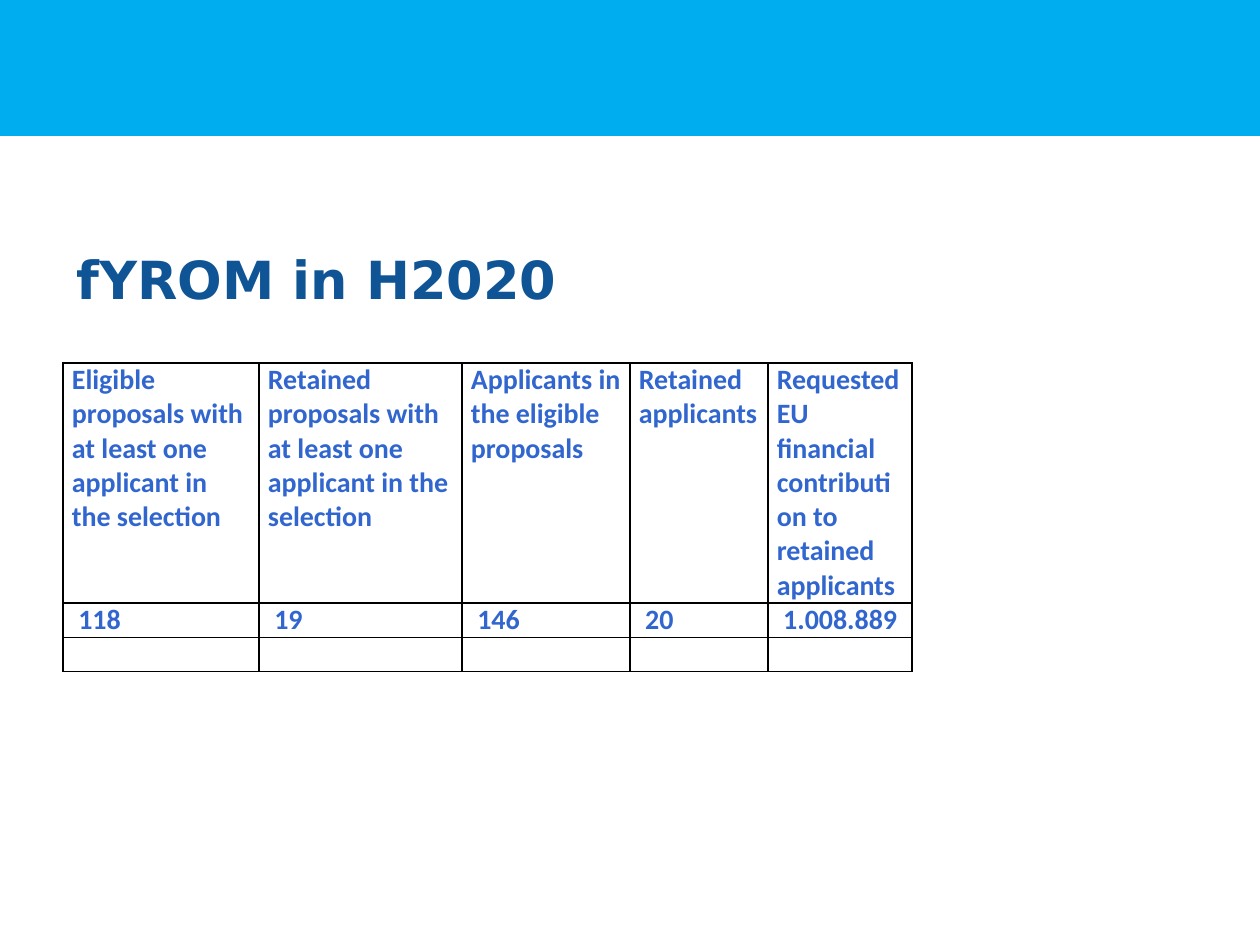
from lxml import etree
from pptx import Presentation
from pptx import util as u
from pptx.dml.color import RGBColor
from pptx.enum import shapes, text
from pptx.oxml.ns import qn

# Content
TITLE = "fYROM in H2020"
ROWS = [
    ["Eligible proposals with at least one applicant in the selection",
     "Retained proposals with at least one applicant in the selection",
     "Applicants in the eligible proposals",
     "Retained applicants",
     "Requested EU financial contribution to retained applicants"],
    [" 118", " 19", " 146", " 20", " 1.008.889"],
    [""] * 5,
]
COLORS = {"band": "00AEF0", "title": "0F5494", "cell": "3166CF", "border": "000000"}

# Layout in px, 126 to the inch
SLIDE = (1260, 945)
BAND_HEIGHT = 136
TITLE_BOX = (64, 214, 1134, 129)
TITLE_INDENT = 49
TABLE_LEFT, TABLE_TOP = 63, 363
COLUMN_WIDTHS = [196, 203, 168, 138, 144]
ROW_HEIGHTS = [240, 34, 34]
CELL_MARGIN = 9


def px(length):
    return u.Emu(round(length * 914400 / 126))


def put_text(frame, words, *, font, size, color):
    paragraph = frame.paragraphs[0]
    paragraph.alignment = text.PP_ALIGN.LEFT
    if not words:
        # An empty line keeps the height of the text size
        etree.SubElement(paragraph._p, qn("a:endParaRPr"), sz=str(size * 100))
        return paragraph
    run = paragraph.add_run()
    run.text = words
    run.font.name, run.font.size, run.font.bold = font, u.Pt(size), True
    run.font.color.rgb = RGBColor.from_string(COLORS[color])
    return paragraph


def add_borders(cell):
    properties = cell._tc.get_or_add_tcPr()
    for position, side in enumerate(("a:lnL", "a:lnR", "a:lnT", "a:lnB")):
        line = etree.Element(qn(side), w=str(u.Pt(1)))
        fill = etree.SubElement(line, qn("a:solidFill"))
        etree.SubElement(fill, qn("a:srgbClr"), val=COLORS["border"])
        properties.insert(position, line)


prs = Presentation()
prs.slide_width, prs.slide_height = map(px, SLIDE)
slide = prs.slides.add_slide(prs.slide_layouts[5])

# Top band, behind the title
band = slide.shapes.add_shape(shapes.MSO_SHAPE.RECTANGLE, 0, 0, px(SLIDE[0]), px(BAND_HEIGHT))
band.shadow.inherit = False
band.fill.solid()
band.fill.fore_color.rgb = RGBColor.from_string(COLORS["band"])
band.line.fill.background()
slide.shapes._spTree.insert(2, band._element)

# Title
title = slide.shapes.title
title.left, title.top, title.width, title.height = map(px, TITLE_BOX)
title.text_frame.word_wrap = True
title.text_frame.vertical_anchor = text.MSO_ANCHOR.MIDDLE
heading = put_text(title.text_frame, TITLE, font="DejaVu Sans", size=30, color="title")
indents = heading._p.get_or_add_pPr()
indents.set("marL", str(px(TITLE_INDENT)))
indents.set("indent", str(-px(TITLE_INDENT)))

# Table
table = slide.shapes.add_table(
    len(ROWS), len(COLUMN_WIDTHS), px(TABLE_LEFT), px(TABLE_TOP),
    px(sum(COLUMN_WIDTHS)), px(sum(ROW_HEIGHTS))).table
table.first_row = table.horz_banding = False
for column, width in zip(table.columns, COLUMN_WIDTHS):
    column.width = px(width)
for r, (words_in_row, height) in enumerate(zip(ROWS, ROW_HEIGHTS)):
    table.rows[r].height = px(height)
    for c, words in enumerate(words_in_row):
        cell = table.cell(r, c)
        cell.margin_left = cell.margin_right = px(CELL_MARGIN)
        cell.margin_top = cell.margin_bottom = 0
        cell.fill.background()
        add_borders(cell)
        put_text(cell.text_frame, words, font="Calibri", size=16, color="cell")

prs.save("out.pptx")
